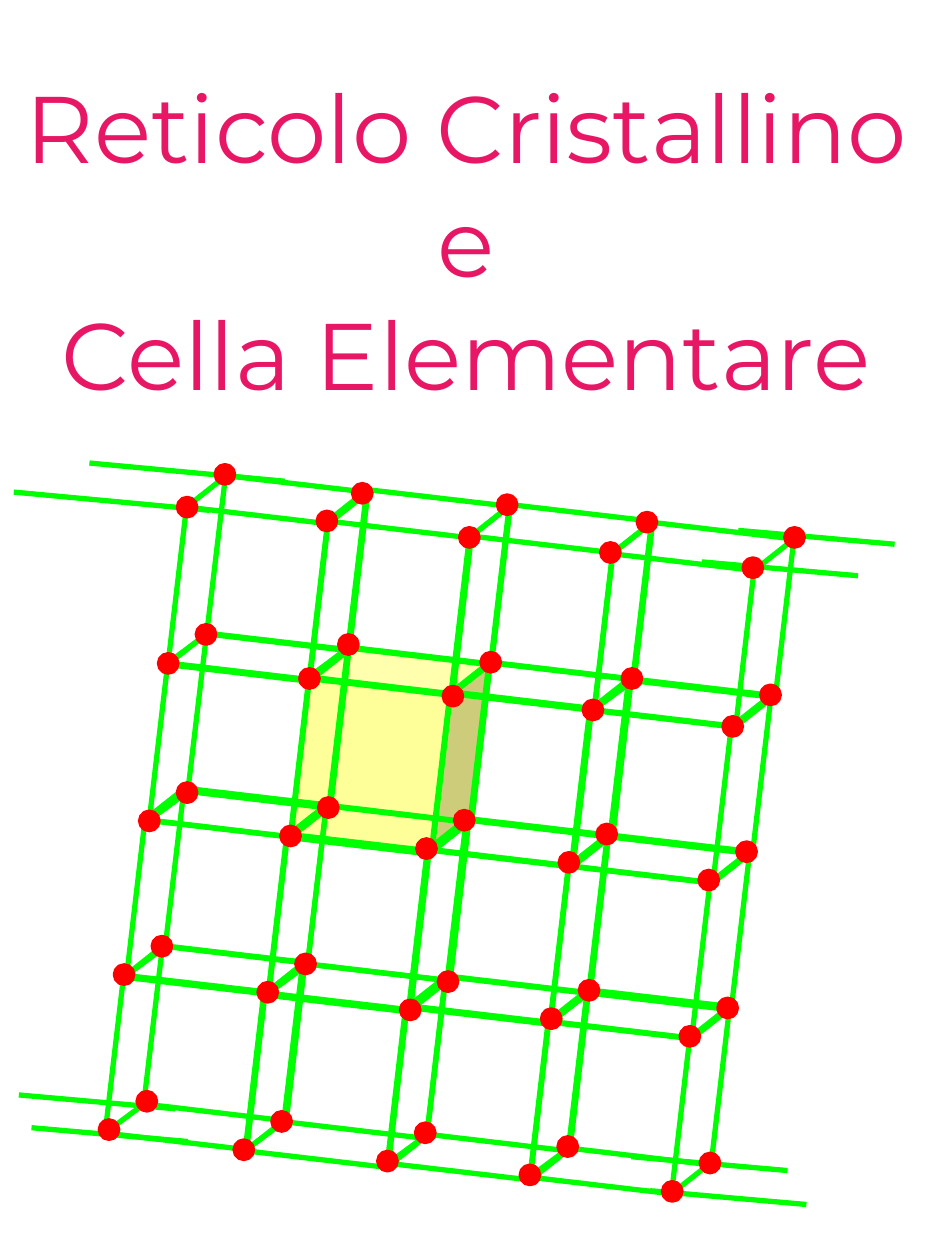
from typing import NamedTuple

from lxml import etree
from pptx import Presentation
from pptx.dml.color import RGBColor
from pptx.enum.shapes import MSO_CONNECTOR, MSO_SHAPE
from pptx.enum.text import MSO_ANCHOR, PP_ALIGN
from pptx.oxml.ns import qn
from pptx.util import Pt

CUBE, OVAL = MSO_SHAPE.CUBE, MSO_SHAPE.OVAL
STRAIGHT = MSO_CONNECTOR.STRAIGHT
CENTER, TOP = PP_ALIGN.CENTER, MSO_ANCHOR.TOP


class Theme(NamedTuple):
    title: RGBColor = RGBColor(0xE8, 0x17, 0x66)
    bond: RGBColor = RGBColor(0x00, 0xFF, 0x00)
    atom: RGBColor = RGBColor(0xFF, 0x00, 0x00)
    unit_cell: RGBColor = RGBColor(0xFF, 0xFF, 0x99)
    font: str = "Montserrat"
    title_size: float = 54
    bond_width: float = 3
    atom_border: float = 2.25


class Point(NamedTuple):
    x: float
    y: float

    def shifted(self, step: "Point") -> "Point":
        return Point(self.x + step.x, self.y + step.y)


class Segment(NamedTuple):
    start: Point
    end: Point


class Cell(NamedTuple):
    corner: Point
    highlighted: bool = False


class AtomPair(NamedTuple):
    """A front atom and the step to the one behind it."""
    front: Point
    depth: Point = Point(21.6, -16.2)


THEME = Theme()
TITLE_LINES = ("Reticolo Cristallino", "e", "Cella Elementare")
CELL_WIDTH, CELL_HEIGHT = 102, 110.2
CELL_TILT, CELL_DEPTH = 6.7, 0.201
ATOM_SIZE = 10.8

# Hidden edges, measured from the corner of the cell's frame
HIDDEN_EDGES = (
    Segment(Point(18, 87.5), Point(97.5, 96.9)),
    Segment(Point(26.6, -2.3), Point(15.8, 88.4)),
    Segment(Point(-6.1, 103.7), Point(17.3, 86.4)),
)

CELLS = [Cell(Point(172.1, 373), highlighted=True)] + [
    Cell(Point(x, y)) for x, y in (
        (91.4, 365), (252.7, 381.6), (332.6, 391),
        (102.2, 275), (182.9, 283), (265, 291.6), (345.6, 301.7),
        (78.5, 453.6), (159.8, 463.7), (239.8, 470.9), (320.4, 480.2),
        (308.9, 568.8), (228.2, 560.9), (146.2, 553.7), (66.2, 543.6),
    )
]

LONG_TAIL, SHORT_TAIL = Point(-111.6, -10.4), Point(-89.3, -7.9)
TAILS = (
    (Point(162.7, 275), LONG_TAIL), (Point(119.5, 291.6), LONG_TAIL),
    (Point(511.2, 311), SHORT_TAIL), (Point(490.3, 329), SHORT_TAIL),
    (Point(450, 668.9), SHORT_TAIL), (Point(460.8, 688.3), SHORT_TAIL),
    (Point(107.3, 652.3), SHORT_TAIL), (Point(100.1, 633.6), SHORT_TAIL),
)

ATOM_PAIRS = [
    AtomPair(Point(101.5, 284.4), Point(21.6, -18.7)),
    AtomPair(Point(181.4, 292.3), Point(20.2, -15.8)),
    AtomPair(Point(262.8, 301.7), Point(21.6, -18.7)),
    AtomPair(Point(343.4, 310.3), Point(20.9, -17.3)),
    AtomPair(Point(424.8, 319), Point(23.8, -17.3)),
    AtomPair(Point(90.7, 373.7), Point(21.6, -16.6)),
    AtomPair(Point(171.4, 382.3), Point(22.3, -19.4)),
    AtomPair(Point(253.4, 392.4), Point(21.6, -19.4)),
    AtomPair(Point(333.4, 400.3), Point(22.3, -18)),
    AtomPair(Point(413.3, 409.7), Point(21.6, -18)),
] + [
    AtomPair(Point(x, y)) for x, y in (
        (79.9, 463.7), (160.6, 472.3), (238.3, 479.5), (319.7, 487.4), (399.6, 497.5),
        (65.5, 551.5), (147.6, 561.6), (229, 571.7), (309.6, 576.7), (388.8, 586.8),
        (56.9, 640.1), (133.9, 651.6), (216, 658.1), (297.4, 666), (378.7, 675.4),
    )
]


def draw_bond(shapes, segment: Segment) -> None:
    bond = shapes.add_connector(STRAIGHT, *(Pt(value) for point in segment for value in point))
    bond.line.color.rgb = THEME.bond
    bond.line.width = Pt(THEME.bond_width)
    etree.SubElement(bond._element.spPr, qn("a:effectLst"))


def draw_cell(shapes, cell: Cell) -> None:
    """Draw a tilted cube grouped with its three hidden edges."""
    members = shapes.add_group_shape().shapes
    cube = members.add_shape(CUBE, Pt(cell.corner.x), Pt(cell.corner.y),
                             Pt(CELL_WIDTH), Pt(CELL_HEIGHT))
    cube.adjustments[0] = CELL_DEPTH
    cube.rotation = CELL_TILT
    cube.shadow.inherit = False
    if cell.highlighted:
        cube.fill.solid()
        cube.fill.fore_color.rgb = THEME.unit_cell
    else:
        cube.fill.background()
    cube.line.color.rgb = THEME.bond
    cube.line.width = Pt(THEME.bond_width)
    for edge in HIDDEN_EDGES:
        draw_bond(members, Segment(cell.corner.shifted(edge.start),
                                   cell.corner.shifted(edge.end)))


def draw_atom(shapes, corner: Point) -> None:
    atom = shapes.add_shape(OVAL, Pt(corner.x), Pt(corner.y), Pt(ATOM_SIZE), Pt(ATOM_SIZE))
    atom.shadow.inherit = False
    atom.fill.solid()
    atom.fill.fore_color.rgb = THEME.atom
    atom.line.color.rgb = THEME.atom
    atom.line.width = Pt(THEME.atom_border)


def draw_title(shapes) -> None:
    box = shapes.add_textbox(Pt(6.4), Pt(36), Pt(520), Pt(126))
    frame = box.text_frame
    frame.word_wrap = False
    frame.vertical_anchor = TOP
    for index, line in enumerate(TITLE_LINES):
        para = frame.add_paragraph() if index else frame.paragraphs[0]
        para.alignment = CENTER
        span = para.add_run()
        span.text = line
        span.font.name = THEME.font
        span.font.size = Pt(THEME.title_size)
        span.font.color.rgb = THEME.title


def main() -> None:
    deck = Presentation()
    deck.slide_width, deck.slide_height = Pt(540), Pt(720)
    shapes = deck.slides.add_slide(deck.slide_layouts[6]).shapes
    for cell in CELLS:
        draw_cell(shapes, cell)
    for start, step in TAILS:
        draw_bond(shapes, Segment(start, start.shifted(step)))
    for pair in ATOM_PAIRS:
        draw_atom(shapes, pair.front)
        draw_atom(shapes, pair.front.shifted(pair.depth))
    draw_title(shapes)
    deck.save("out.pptx")


if __name__ == "__main__":
    main()
